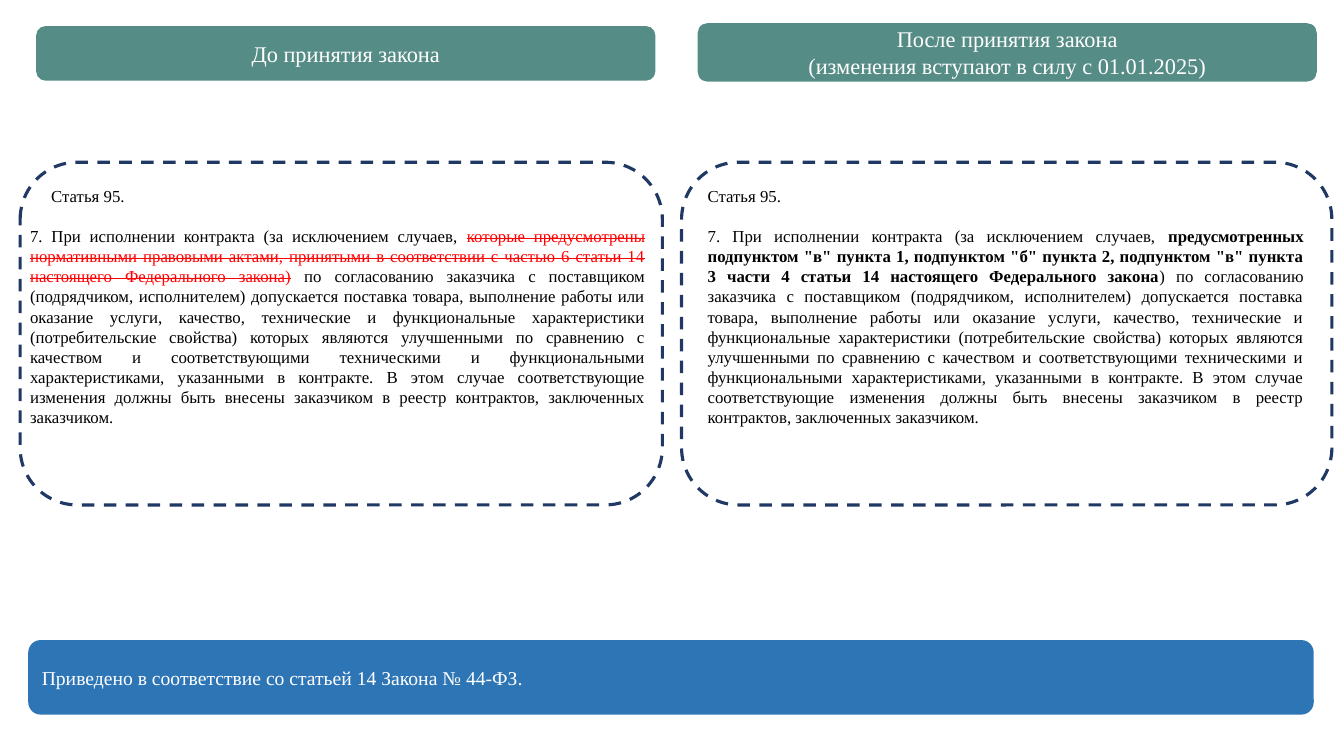
import pptx
import pptx.dml.color
import pptx.enum.dml
import pptx.enum.shapes
import pptx.enum.text
import pptx.util

Inches = pptx.util.Inches
Pt = pptx.util.Pt
RGBColor = pptx.dml.color.RGBColor
ALIGN = pptx.enum.text.PP_ALIGN

FONT = "Times New Roman"
GREEN = RGBColor(0x56, 0x8C, 0x86)
BLUE = RGBColor(0x2E, 0x75, 0xB6)
NAVY = RGBColor(0x20, 0x38, 0x64)
WHITE = RGBColor(0xFF, 0xFF, 0xFF)
BLACK = RGBColor(0, 0, 0)
RED = RGBColor(0xFF, 0, 0)

ARTICLE = "Статья 95."
INTRO = "7. При исполнении контракта (за исключением случаев, "
OLD_WORDING = (
    "которые предусмотрены нормативными правовыми актами, принятыми в "
    "соответствии с частью 6 статьи 14 настоящего Федерального закона)"
)
NEW_WORDING = (
    'предусмотренных подпунктом "в" пункта 1, подпунктом "б" пункта 2, '
    'подпунктом "в" пункта 3 части 4 статьи 14 настоящего Федерального закона'
)
ENDING = (
    " по согласованию заказчика с поставщиком (подрядчиком, исполнителем) "
    "допускается поставка товара, выполнение работы или оказание услуги, "
    "качество, технические и функциональные характеристики (потребительские "
    "свойства) которых являются улучшенными по сравнению с качеством и "
    "соответствующими техническими и функциональными характеристиками, "
    "указанными в контракте. В этом случае соответствующие изменения должны "
    "быть внесены заказчиком в реестр контрактов, заключенных заказчиком."
)


def style_run(r, size, color):
    r.font.name = FONT
    r.font.size = Pt(size)
    r.font.color.rgb = color


def add_round_rect(s, x, y, w, h):
    sp = s.shapes.add_shape(
        pptx.enum.shapes.MSO_SHAPE.ROUNDED_RECTANGLE,
        Inches(x), Inches(y), Inches(w), Inches(h))
    sp.shadow.inherit = False
    return sp


def add_banner(s, x, y, w, h, lines, fill, size, align):
    sp = add_round_rect(s, x, y, w, h)
    sp.fill.solid()
    sp.fill.fore_color.rgb = fill
    sp.line.fill.background()
    tf = sp.text_frame
    tf.word_wrap = True
    tf.vertical_anchor = pptx.enum.text.MSO_ANCHOR.MIDDLE
    tf.text = "\n".join(lines)
    for p in tf.paragraphs:
        p.alignment = align
        style_run(p.runs[0], size, WHITE)


def add_dashed_frame(s, x, y, w, h):
    sp = add_round_rect(s, x, y, w, h)
    sp.fill.background()
    sp.line.color.rgb = NAVY
    sp.line.width = Pt(2.25)
    sp.line.dash_style = pptx.enum.dml.MSO_LINE.DASH


def add_article(s, x, y, w, h, parts, indent=0):
    """Add the article text and return the runs of its clause."""
    sp = s.shapes.add_textbox(Inches(x), Inches(y), Inches(w), Inches(h))
    tf = sp.text_frame
    tf.word_wrap = True
    tf.text = ARTICLE
    title = tf.paragraphs[0]
    title.space_after = Pt(14.4)
    # First-line indent of the article title
    title._p.get_or_add_pPr().set("indent", str(Inches(indent)))
    clause = tf.add_paragraph()
    for part in parts:
        clause.add_run().text = part
    for p in tf.paragraphs:
        p.alignment = ALIGN.JUSTIFY
        for r in p.runs:
            style_run(r, 12, BLACK)
    return clause.runs


def main():
    prs = pptx.Presentation()
    prs.slide_width = Inches(13.33)
    prs.slide_height = Inches(7.5)
    s = prs.slides.add_slide(prs.slide_layouts[6])

    # Column headers
    add_banner(s, 0.36, 0.26, 6.14, 0.54, ["До принятия закона"],
               GREEN, 16, ALIGN.CENTER)
    add_banner(s, 6.92, 0.23, 6.14, 0.58,
               ["После принятия закона",
                "(изменения вступают в силу с 01.01.2025)"],
               GREEN, 16, ALIGN.CENTER)

    # Frames around both wordings
    add_dashed_frame(s, 0.2, 1.61, 6.37, 3.4)
    add_dashed_frame(s, 6.76, 1.61, 6.45, 3.4)

    # Conclusion
    add_banner(s, 0.28, 6.35, 12.75, 0.74,
               ["Приведено в соответствие со статьей 14 Закона № 44-ФЗ."],
               BLUE, 14, ALIGN.JUSTIFY)

    # New wording in bold
    runs = add_article(s, 6.92, 1.79, 6.11, 2.73,
                       [INTRO, NEW_WORDING, ")" + ENDING])
    runs[1].font.bold = True

    # Old wording in red, struck through
    runs = add_article(s, 0.2, 1.79, 6.3, 3.13,
                       [INTRO, OLD_WORDING, ENDING], indent=0.21)
    runs[1].font.color.rgb = RED
    runs[1]._r.get_or_add_rPr().set("strike", "sngStrike")

    prs.save("out.pptx")


if __name__ == "__main__":
    main()
